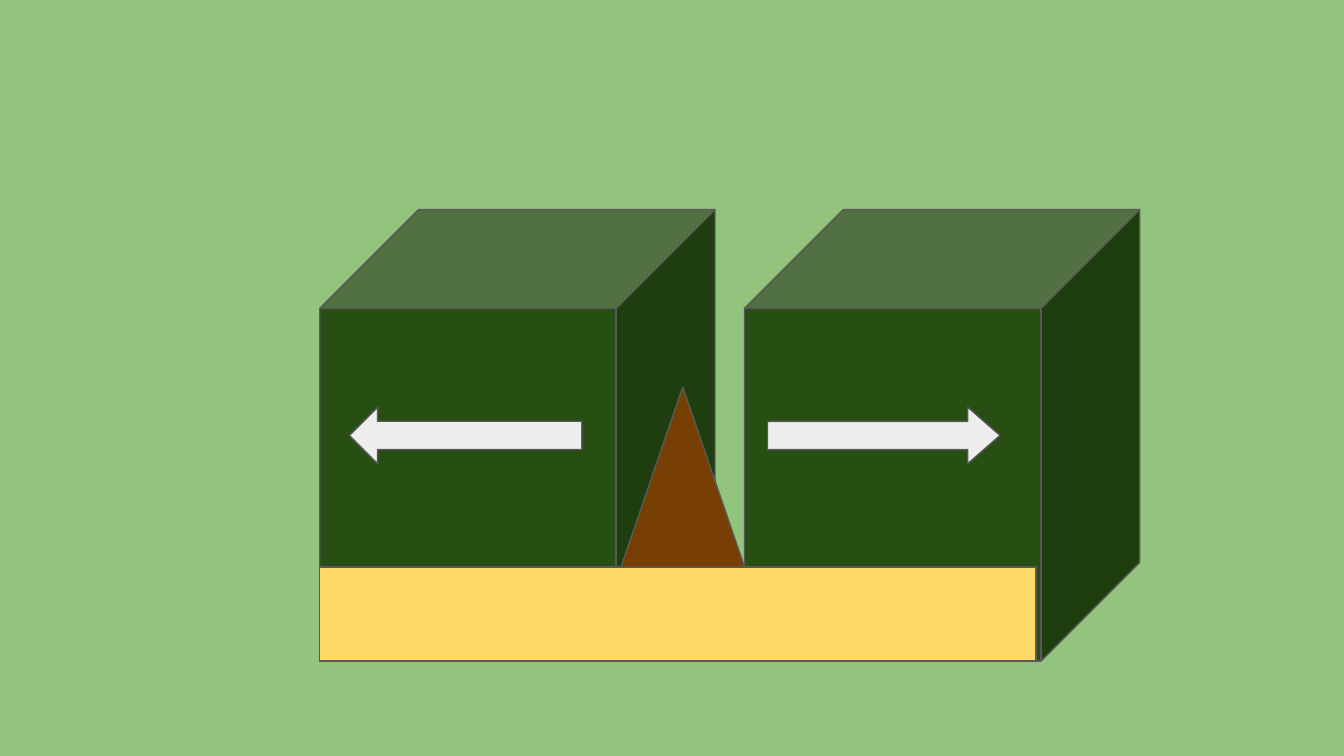
from dataclasses import dataclass

from pptx import Presentation
from pptx.dml.color import RGBColor
from pptx.enum.shapes import MSO_SHAPE
from pptx.util import Inches, Pt

BACKGROUND, GREEN, WHITE = "93C47D", "274E13", "EEEEEE"
YELLOW, BROWN, OUTLINE = "FFD966", "783F04", "595959"


@dataclass
class Part:
    kind: MSO_SHAPE
    left: float
    top: float
    width: float
    height: float
    color: str
    adjustments: tuple[float, ...] = ()
    rotation: float = 0


def set_fill(fill, color: str) -> None:
    fill.solid()
    fill.fore_color.rgb = RGBColor.from_string(color)


def draw(slide, part: Part) -> None:
    box = (part.left, part.top, part.width, part.height)
    sp = slide.shapes.add_shape(part.kind, *map(Inches, box))
    sp.shadow.inherit = False
    sp.rotation = part.rotation
    for i, value in enumerate(part.adjustments):
        sp.adjustments[i] = value
    set_fill(sp.fill, part.color)
    set_fill(sp.line.fill, OUTLINE)
    sp.line.width = Pt(0.75)


def block(left: float) -> Part:
    return Part(MSO_SHAPE.CUBE, left, 1.56, 2.94, 3.36, GREEN, (0.25,))


def arrow(left: float, head: float, rotation: float = 0) -> Part:
    return Part(MSO_SHAPE.LEFT_ARROW, left, 3.03, 1.73, 0.42, WHITE,
                (0.5, head), rotation)


# Back to front: blocks, arrows pulling apart, base layer, rising wedge
PARTS = [
    block(2.38),
    block(5.54),
    arrow(2.6, 0.5),
    arrow(5.71, 0.57, rotation=180),
    Part(MSO_SHAPE.FLOWCHART_PROCESS, 2.38, 4.22, 5.33, 0.7, YELLOW),
    Part(MSO_SHAPE.ISOSCELES_TRIANGLE, 4.62, 2.88, 0.92, 1.34, BROWN, (0.5,)),
]


def main() -> None:
    prs = Presentation()
    # Widescreen, 16:9
    prs.slide_width = Inches(10)
    prs.slide_height = Inches(10 * 9 / 16)
    s = prs.slides.add_slide(prs.slide_layouts[6])
    set_fill(s.background.fill, BACKGROUND)
    for part in PARTS:
        draw(s, part)
    prs.save("out.pptx")


if __name__ == "__main__":
    main()
